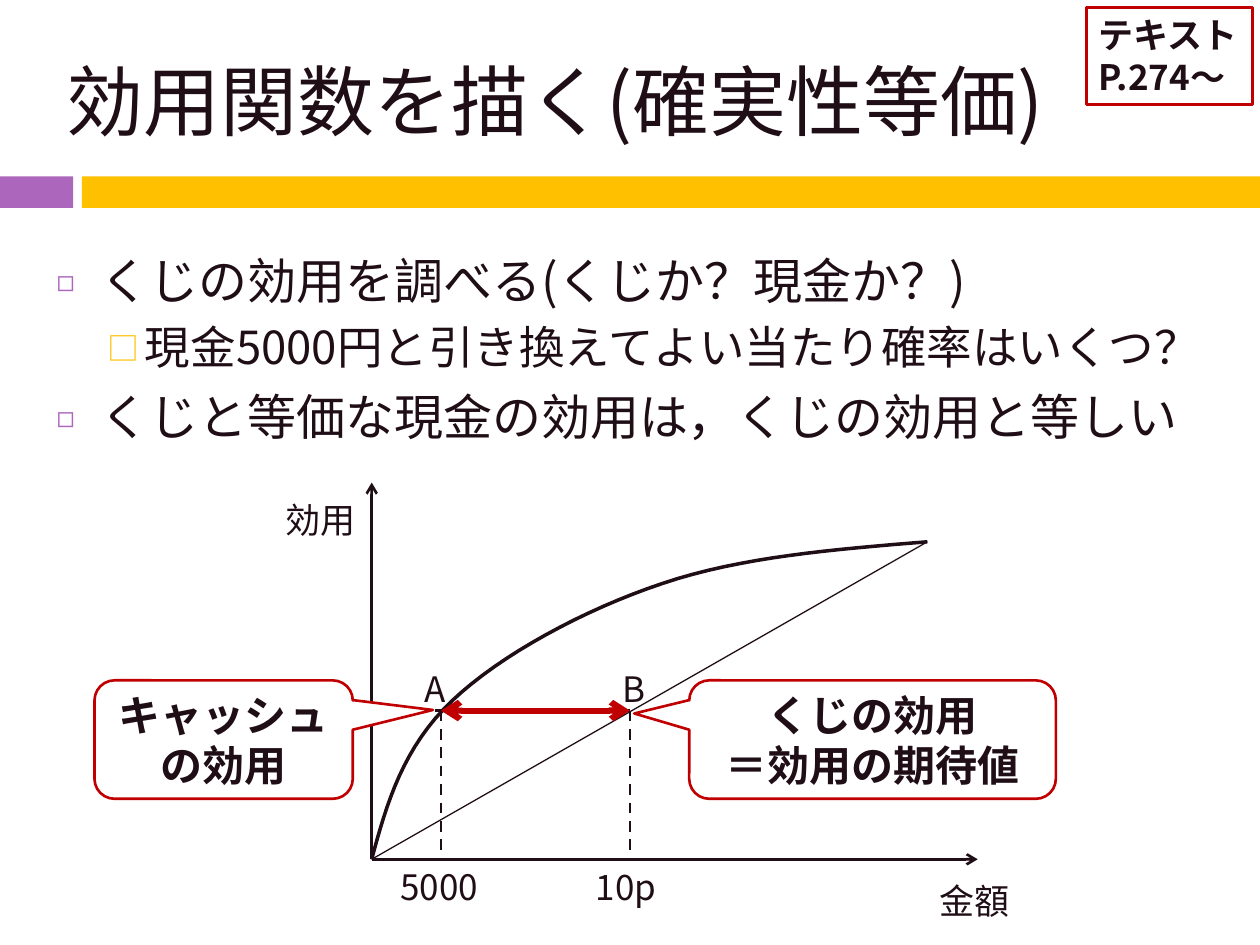
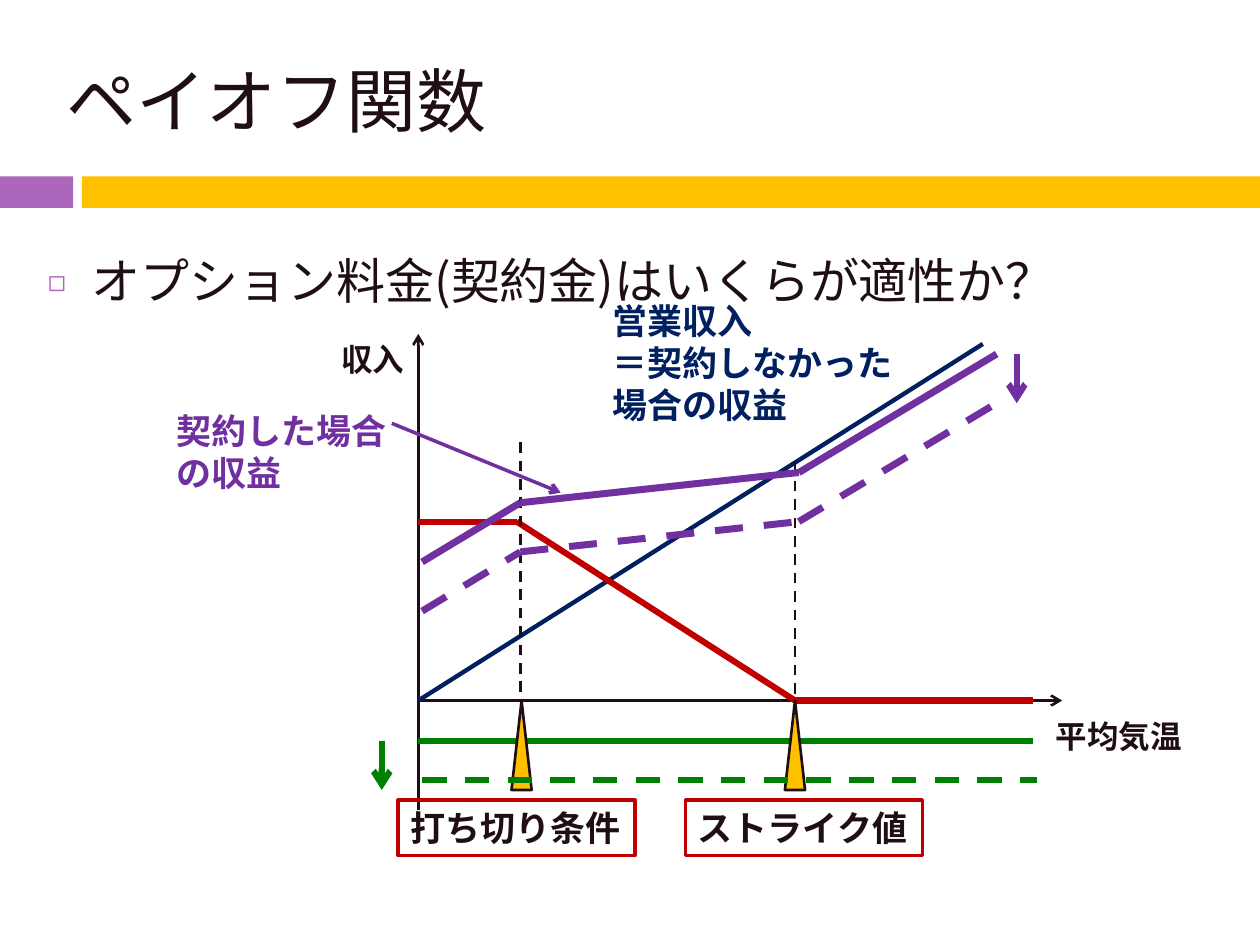
import dataclasses
import itertools

import lxml.etree
import pptx
import pptx.dml.color
import pptx.enum.dml
import pptx.enum.shapes
import pptx.enum.text
import pptx.oxml.ns
import pptx.util

SHAPE = pptx.enum.shapes.MSO_SHAPE
ALIGN = pptx.enum.text.PP_ALIGN
ANCHOR = pptx.enum.text.MSO_ANCHOR
AUTO_SIZE = pptx.enum.text.MSO_AUTO_SIZE


@dataclasses.dataclass(frozen=True)
class Theme:
    font: str = "Noto Sans CJK JP"
    ink: str = "200E17"
    paper: str = "FFFFFF"
    purple: str = "AC66BB"
    gold: str = "FFC000"
    red: str = "C00000"
    navy: str = "002060"
    violet: str = "7030A0"
    green: str = "008000"
    title: int = 44
    title_small: int = 40
    bullet: int = 28
    sub_bullet: int = 26
    callout: int = 24
    label: int = 20
    axis_label: int = 18
    thin: float = 0.75
    axis: float = 1.5
    curve: float = 2
    utility: float = 2.5
    strong: float = 3.5
    revenue: float = 4


def px(length):
    return pptx.util.Emu(length * 9144)


def rgb(color):
    return pptx.dml.color.RGBColor.from_string(color)


def child(parent, tag, **attributes):
    return lxml.etree.SubElement(parent, pptx.oxml.ns.qn(tag), attributes)


def bezier(start, c1, c2, end, steps=16):
    for step in range(1, steps + 1):
        t = step / steps
        weights = ((1 - t) ** 3, 3 * t * (1 - t) ** 2, 3 * t ** 2 * (1 - t), t ** 3)
        yield tuple(
            sum(w * p[i] for w, p in zip(weights, (start, c1, c2, end)))
            for i in (0, 1)
        )


class Deck:
    def __init__(self, theme):
        self.theme = theme
        self.presentation = pptx.Presentation()
        self.presentation.slide_width = px(1000)
        self.presentation.slide_height = px(750)
        self.slide = None

    def new_slide(self, title, size):
        layout = self.presentation.slide_layouts[1]
        self.slide = self.presentation.slides.add_slide(layout)
        self.shape(SHAPE.RECTANGLE, (0, 140, 58, 25), self.theme.purple)
        self.shape(SHAPE.RECTANGLE, (65, 140, 935, 25), self.theme.gold)
        heading = self.slide.shapes.title
        self.place(heading, (43, 25, 915, 108))
        heading.text_frame.vertical_anchor = ANCHOR.MIDDLE
        self.add_lines(heading.text_frame, [title], size)

    def place(self, holder, box):
        holder.left, holder.top, holder.width, holder.height = map(px, box)
        holder.text_frame.word_wrap = True
        holder.text_frame.auto_size = AUTO_SIZE.NONE

    def add_lines(self, frame, lines, size, color=None, bold=False, align=ALIGN.LEFT):
        for index, line in enumerate(lines):
            paragraph = frame.add_paragraph() if index else frame.paragraphs[0]
            paragraph.alignment = align
            self.add_words(paragraph, line, size, color, bold)

    def add_words(self, paragraph, words, size, color=None, bold=False):
        run = paragraph.add_run()
        run.text = words
        run.font.size = pptx.util.Pt(size)
        run.font.bold = bold
        run.font.name = self.theme.font
        run.font.color.rgb = rgb(color or self.theme.ink)
        child(run._r.get_or_add_rPr(), "a:ea", typeface=self.theme.font)

    def bullets(self, left, items):
        theme = self.theme
        levels = (
            (theme.bullet, 35, 35, 7, "◻", theme.purple, "60000"),
            (theme.sub_bullet, 70, 30, 5.5, "□", theme.gold, "70000"),
        )
        body = self.slide.placeholders[1]
        self.place(body, (left, 194, 945, 535))
        frame = body.text_frame
        for index, (level, words) in enumerate(items):
            size, margin, hang, before, mark, color, scale = levels[level]
            paragraph = frame.add_paragraph() if index else frame.paragraphs[0]
            paragraph.level = level
            paragraph.space_before = pptx.util.Pt(before)
            properties = paragraph._p.get_or_add_pPr()
            properties.set("marL", str(px(margin)))
            properties.set("indent", str(-px(hang)))
            child(child(properties, "a:buClr"), "a:srgbClr", val=color)
            child(properties, "a:buSzPct", val=scale)
            child(properties, "a:buFont", typeface=theme.font)
            child(properties, "a:buChar", char=mark)
            self.add_words(paragraph, words, size)

    def paint(self, shape, fill=None, line=None, width=1.5):
        shape.shadow.inherit = False
        if fill:
            shape.fill.solid()
            shape.fill.fore_color.rgb = rgb(fill)
        else:
            shape.fill.background()
        if line:
            shape.line.color.rgb = rgb(line)
            shape.line.width = pptx.util.Pt(width)
        else:
            shape.line.fill.background()

    def shape(self, kind, box, fill=None, line=None, width=1.5):
        shape = self.slide.shapes.add_shape(kind, *map(px, box))
        self.paint(shape, fill, line, width)
        return shape

    def callout(self, box, pointer, lines):
        bubble = self.shape(SHAPE.ROUNDED_RECTANGULAR_CALLOUT, box,
                            self.theme.paper, self.theme.red)
        for index, value in enumerate(pointer):
            bubble.adjustments[index] = value
        bubble.text_frame.vertical_anchor = ANCHOR.MIDDLE
        bubble.text_frame.word_wrap = True
        self.add_lines(bubble.text_frame, lines, self.theme.callout,
                       bold=True, align=ALIGN.CENTER)

    def frame(self, box, lines, width):
        framed = self.shape(SHAPE.RECTANGLE, box, None, self.theme.red, width)
        framed.text_frame.vertical_anchor = ANCHOR.TOP
        framed.text_frame.word_wrap = False
        self.add_lines(framed.text_frame, lines, self.theme.label, bold=True)

    def label(self, box, lines, size=None, color=None, bold=False, wrap=False):
        text = self.slide.shapes.add_textbox(*map(px, box))
        text.text_frame.word_wrap = wrap
        self.add_lines(text.text_frame, lines, size or self.theme.label, color, bold)

    def line(self, start, end, color=None, width=None, dash=False, arrows=()):
        connector = self.slide.shapes.add_connector(
            pptx.enum.shapes.MSO_CONNECTOR.STRAIGHT, *map(px, (*start, *end)))
        connector.line.color.rgb = rgb(color or self.theme.ink)
        connector.line.width = pptx.util.Pt(width or self.theme.axis)
        if dash:
            connector.line.dash_style = pptx.enum.dml.MSO_LINE.DASH
        properties = connector._element.spPr
        for arrow in arrows:
            child(properties.find(pptx.oxml.ns.qn("a:ln")), f"a:{arrow}End", type="arrow")
        child(properties, "a:effectLst")

    def arrow(self, start, end, color=None, width=None):
        self.line(start, end, color, width, arrows=("tail",))

    def polyline(self, points, color, width, dash=False):
        for start, end in itertools.pairwise(points):
            self.line(start, end, color, width, dash)

    def curve(self, start, segments):
        points = []
        current = start
        for segment in segments:
            points.extend(bezier(current, *segment))
            current = segment[-1]
        builder = self.slide.shapes.build_freeform(*map(px, start))
        builder.add_line_segments(
            [(round(x * 9144), round(y * 9144)) for x, y in points], close=False)
        self.paint(builder.convert_to_shape(), None, self.theme.ink, self.theme.curve)


def utility_slide(deck):
    theme = deck.theme
    deck.new_slide("効用関数を描く(確実性等価)", theme.title)
    deck.bullets(35, [
        (0, "くじの効用を調べる(くじか？現金か？)"),
        (1, "現金5000円と引き換えてよい当たり確率はいくつ？"),
        (0, "くじと等価な現金の効用は，くじの効用と等しい"),
    ])
    origin, best = (295, 682), (736, 430)
    cash, lottery = (350, 564), (500, 564)
    deck.arrow(origin, (295, 383))
    deck.arrow(origin, (776, 682))
    deck.curve(origin, [
        ((307, 637), (320, 593), (359, 556)),
        ((397, 520), (463, 484), (526, 463)),
        ((588, 442), (662, 436), best),
    ])
    deck.line(origin, best, width=theme.thin)
    deck.line(lottery, (500, 682), dash=True)
    deck.line(lottery, (295, 564), dash=True)
    deck.line(cash, (350, 682), dash=True)
    deck.line(cash, lottery, theme.red, theme.strong, arrows=("head", "tail"))
    for left, top, width, words in (
        (217, 391, 76, "効用"),
        (736, 693, 76, "金額"),
        (308, 682, 90, "5000"),
        (463, 682, 72, "10p"),
        (327, 525, 39, "A"),
        (484, 525, 39, "B"),
    ):
        deck.label((left, top, width, 44), [words])
    deck.callout((547, 540, 291, 94), (-0.65, -0.22, 0.17),
                 ["くじの効用", "＝効用の期待値"])
    deck.callout((75, 540, 205, 94), (0.81, -0.25, 0.17),
                 ["キャッシュ", "の効用"])
    deck.frame((862, 6, 132, 77), ["テキスト", "P.274～"], 1.75)


def payoff_slide(deck):
    theme = deck.theme
    deck.new_slide("ペイオフ関数", theme.title_small)
    deck.bullets(28, [(0, "オプション料金(契約金)はいくらが適性か？")])
    origin, strike = (332, 556), (631, 556)
    deck.arrow((332, 643), (332, 265))
    deck.arrow(origin, (843, 556))
    deck.line(origin, (780, 273), theme.navy, theme.utility)
    deck.polyline([(332, 414), (410, 414), strike, (820, 556)],
                  theme.red, theme.strong)
    deck.line((332, 588), (820, 588), theme.green, theme.strong)
    deck.line((413, 351), (413, 556), dash=True)
    deck.line((631, 367), strike, dash=True)
    for marker, left, words in ((623, 544, "ストライク値"), (406, 316, "打ち切り条件")):
        deck.shape(SHAPE.ISOSCELES_TRIANGLE, (marker, 556, 16, 71),
                   theme.gold, theme.ink)
        deck.frame((left, 635, 188, 44), [words], 2)
    deck.label((476, 233, 260, 111), ["営業収入", "＝契約しなかった場合の収益"],
               color=theme.navy, bold=True, wrap=True)
    deck.label((261, 265, 71, 40), ["収入"], theme.axis_label, bold=True)
    deck.label((828, 564, 121, 40), ["平均気温"], theme.axis_label, bold=True)
    revenue = [(335, 446), (413, 399), (634, 375), (791, 281)]
    fee_rise = 39
    deck.polyline(revenue, theme.violet, theme.revenue)
    deck.label((130, 320, 189, 77), ["契約した場合の収益"],
               color=theme.violet, bold=True, wrap=True)
    deck.arrow((311, 336), (445, 391), theme.violet, theme.curve)
    deck.line((335, 619), (823, 619), theme.green, theme.strong, dash=True)
    deck.arrow((303, 588), (303, 588 + fee_rise), theme.green, theme.strong)
    deck.polyline([(x, y + fee_rise) for x, y in revenue],
                  theme.violet, theme.revenue, dash=True)
    deck.arrow((807, 281), (807, 281 + fee_rise), theme.violet, theme.strong)


def main():
    deck = Deck(Theme())
    utility_slide(deck)
    payoff_slide(deck)
    deck.presentation.save("out.pptx")


if __name__ == "__main__":
    main()
